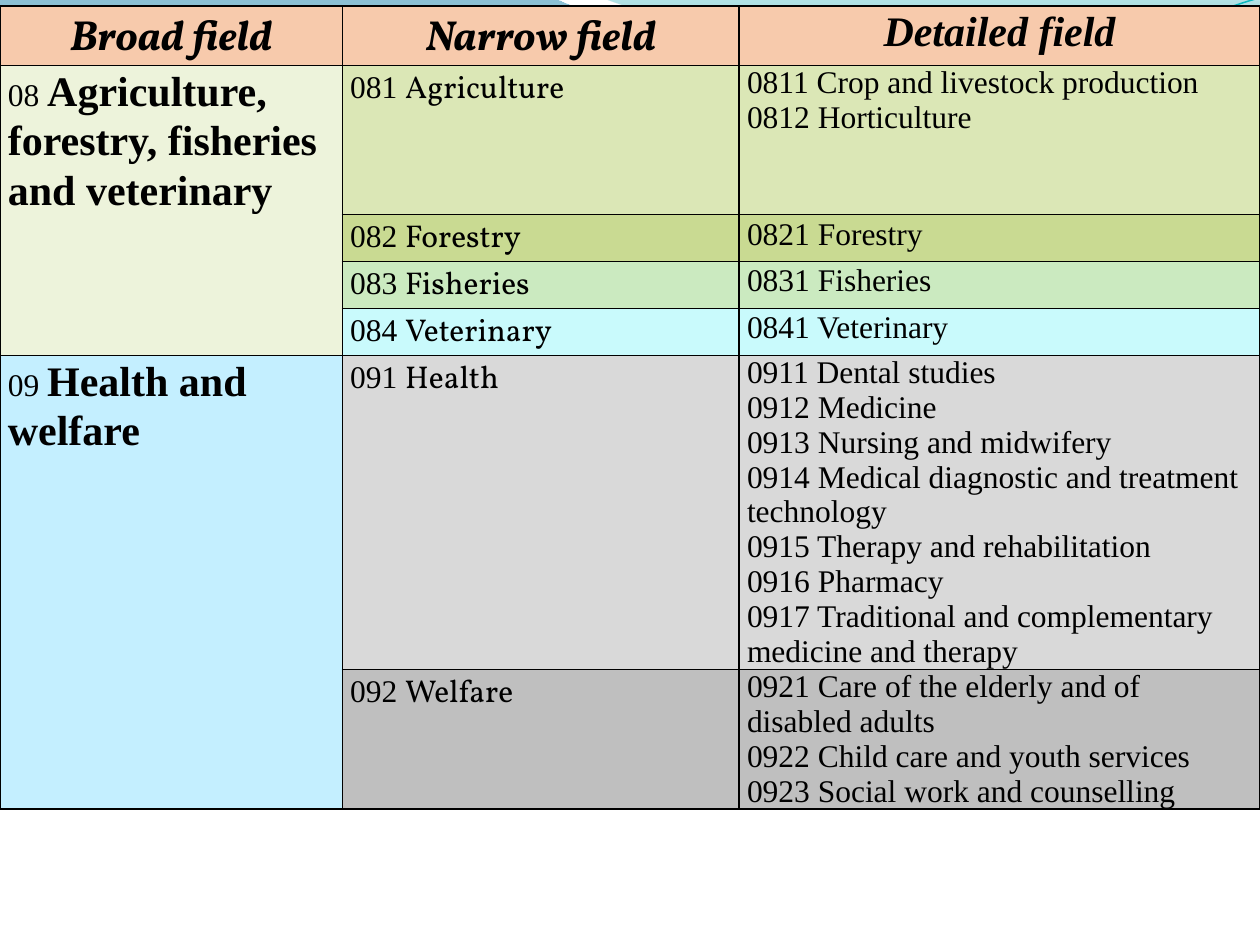
from dataclasses import dataclass

from lxml.etree import SubElement
from pptx import Presentation
from pptx.dml.color import RGBColor
from pptx.enum.text import PP_ALIGN as Align
from pptx.oxml.ns import qn
from pptx.util import Pt

SERIF, DISPLAY = "Times New Roman", "Vollkorn"
COLUMNS = (195.6, 226.8, 297.6)
HEADER_FILL = "F7CAAC"


@dataclass
class Narrow:
    code: str
    name: str
    details: tuple[str, ...]
    color: str
    height: float


@dataclass
class Broad:
    code: str
    name: str
    color: str
    fields: tuple[Narrow, ...]


@dataclass
class Stop:
    color: str
    position: float
    opacity: int


FIELDS = (
    Broad("08", "Agriculture, forestry, fisheries and veterinary", "EDF3DB", (
        Narrow("081", "Agriculture",
               ("0811 Crop and livestock production", "0812 Horticulture"), "DBE7B6", 85),
        Narrow("082", "Forestry", ("0821 Forestry",), "C9DA92", 26.8),
        Narrow("083", "Fisheries", ("0831 Fisheries",), "CBEAC0", 26.8),
        Narrow("084", "Veterinary", ("0841 Veterinary",), "C9FAFC", 26.8),
    )),
    Broad("09", "Health and welfare", "C4EFFF", (
        Narrow("091", "Health", (
            "0911 Dental studies", "0912 Medicine", "0913 Nursing and midwifery",
            "0914 Medical diagnostic and treatment", "technology",
            "0915 Therapy and rehabilitation", "0916 Pharmacy",
            "0917 Traditional and complementary", "medicine and therapy",
        ), "D9D9D9", 179.4),
        Narrow("092", "Welfare", (
            "0921 Care of the elderly and of", "disabled adults",
            "0922 Child care and youth services", "0923 Social work and counselling",
        ), "BFBFBF", 79.5),
    )),
)


def rgb(color: str) -> RGBColor:
    return RGBColor.from_string(color)


def add_curve(page, start: tuple, segments: list, closed: bool):
    """Draw lines (one point) and cubic curves (three points) as one outline."""
    ends = [segment[-1] for segment in segments]
    builder = page.shapes.build_freeform(*start, scale=Pt(1))
    builder.add_line_segments(ends, close=closed)
    shape = builder.convert_to_shape()
    shape.shadow.inherit = False
    left = min(x for x, _ in (start, *ends))
    top = min(y for _, y in (start, *ends))
    lines = list(shape.element.spPr.iter(qn("a:lnTo")))
    for line, segment in zip(lines, segments):
        if len(segment) == 3:
            curve = line.makeelement(qn("a:cubicBezTo"))
            for x, y in segment:
                SubElement(curve, qn("a:pt"), x=str(x - left), y=str(y - top))
            line.getparent().replace(line, curve)
    return shape


def add_wave(page, start: tuple, segments: list, stops: tuple[Stop, Stop]) -> None:
    shape = add_curve(page, start, segments, closed=True)
    shape.line.fill.background()
    shape.fill.gradient()
    shape.fill.gradient_angle = 270
    for target, stop in zip(shape.fill.gradient_stops, stops):
        target.color.rgb = rgb(stop.color)
        target.position = stop.position
    for element, stop in zip(shape.element.spPr.iter(qn("a:srgbClr")), stops):
        SubElement(element, qn("a:alpha"), val=str(stop.opacity * 1000))


def add_crest(page, start: tuple, segments: list, color: str, width: float) -> None:
    shape = add_curve(page, start, segments, closed=False)
    shape.fill.background()
    shape.line.color.rgb = rgb(color)
    shape.line.width = Pt(width)


def add_table(page, top: float, heights: list[float]):
    frame = page.shapes.add_table(len(heights), len(COLUMNS), Pt(0), Pt(top),
                                  Pt(sum(COLUMNS)), Pt(sum(heights)))
    table = frame.table
    table.first_row = table.horz_banding = False
    for column, width in zip(table.columns, COLUMNS):
        column.width = Pt(width)
    for row, height in zip(table.rows, heights):
        row.height = Pt(height)
    return table


def style_cell(cell, color: str, inset: float = 4.5, sides: str = "LRTB") -> None:
    """Set insets, fill, and a black border on the named sides only."""
    cell.margin_left = cell.margin_right = Pt(inset)
    cell.margin_top = cell.margin_bottom = Pt(0)
    properties = cell._tc.get_or_add_tcPr()
    for side in "LRTB":
        border = SubElement(properties, qn(f"a:ln{side}"), w=str(Pt(1)))
        if side in sides:
            paint = SubElement(border, qn("a:solidFill"))
            SubElement(paint, qn("a:srgbClr"), val="000000")
        else:
            SubElement(border, qn("a:noFill"))
    cell.fill.solid()
    cell.fill.fore_color.rgb = rgb(color)


def add_span(para, text: str, *, size=18, font=SERIF, bold=False, italic=False) -> None:
    span = para.add_run()
    span.text = text
    span.font.size, span.font.name = Pt(size), font
    span.font.bold, span.font.italic = bold, italic
    span.font.color.rgb = rgb("000000")


def loose_para(cell, align=Align.LEFT):
    para = cell.text_frame.paragraphs[0]
    para.alignment = align
    para.line_spacing = 1.07
    para.space_after = Pt(8)
    return para


def fill_details(cell, lines: tuple[str, ...]) -> None:
    if len(lines) == 1:
        add_span(loose_para(cell), lines[0])
        return
    frame = cell.text_frame
    for index, line in enumerate(lines):
        add_span(frame.add_paragraph() if index else frame.paragraphs[0], line)


def add_header(page) -> None:
    table = add_table(page, 3.5, [34])
    titles = (("Broad field", DISPLAY), ("Narrow field", DISPLAY), ("Detailed field", SERIF))
    for cell, (title, font) in zip(table.rows[0].cells, titles):
        style_cell(cell, HEADER_FILL, inset=5)
        add_span(loose_para(cell, Align.CENTER), title, size=24, font=font, bold=True, italic=True)


def add_fields(page) -> None:
    table = add_table(page, 37.4, [field.height for broad in FIELDS for field in broad.fields])
    rows = iter(table.rows)
    for broad in FIELDS:
        for field in broad.fields:
            first, last = field is broad.fields[0], field is broad.fields[-1]
            group, narrow, detail = next(rows).cells
            style_cell(group, broad.color, sides="LR" + "T" * first + "B" * last)
            if first:
                para = loose_para(group)
                add_span(para, f"{broad.code} ")
                add_span(para, broad.name, size=24, bold=True)
            style_cell(narrow, field.color)
            para = loose_para(narrow)
            add_span(para, f"{field.code} ")
            add_span(para, field.name, font=DISPLAY)
            style_cell(detail, field.color)
            fill_details(detail, field.details)


def main() -> None:
    deck = Presentation()
    deck.slide_width, deck.slide_height = Pt(720), Pt(540)
    page = deck.slides.add_slide(deck.slide_layouts[6])
    add_wave(page, (-1, 0), [
        [(317, -1)], [(343, 12), (478, 45), (546, 45)], [(614, 45), (690, 19), (720, 6)],
        [(721, 26)], [(708, 32), (626, 55), (537, 54)], [(448, 54), (275, 20), (185, 24)],
        [(93, 26), (33, 60), (-1, 81)],
    ], (Stop("0074A1", 0, 45), Stop("00C6CF", 1, 55)))
    add_wave(page, (345, -1), [
        [(367, 8), (491, 45), (554, 47)], [(616, 49), (692, 23), (720, 15)], [(720, 0)],
    ], (Stop("00A1A9", 0, 30), Stop("008BBF", 0.8, 45)))
    add_crest(page, (0, 80), [
        [(35, 67), (114, 41), (199, 37)], [(284, 34), (427, 64), (513, 58)],
        [(600, 51), (675, 11), (719, -1)],
    ], "0AB8BF", 0.85)
    add_header(page)
    add_fields(page)
    deck.save("out.pptx")


if __name__ == "__main__":
    main()
